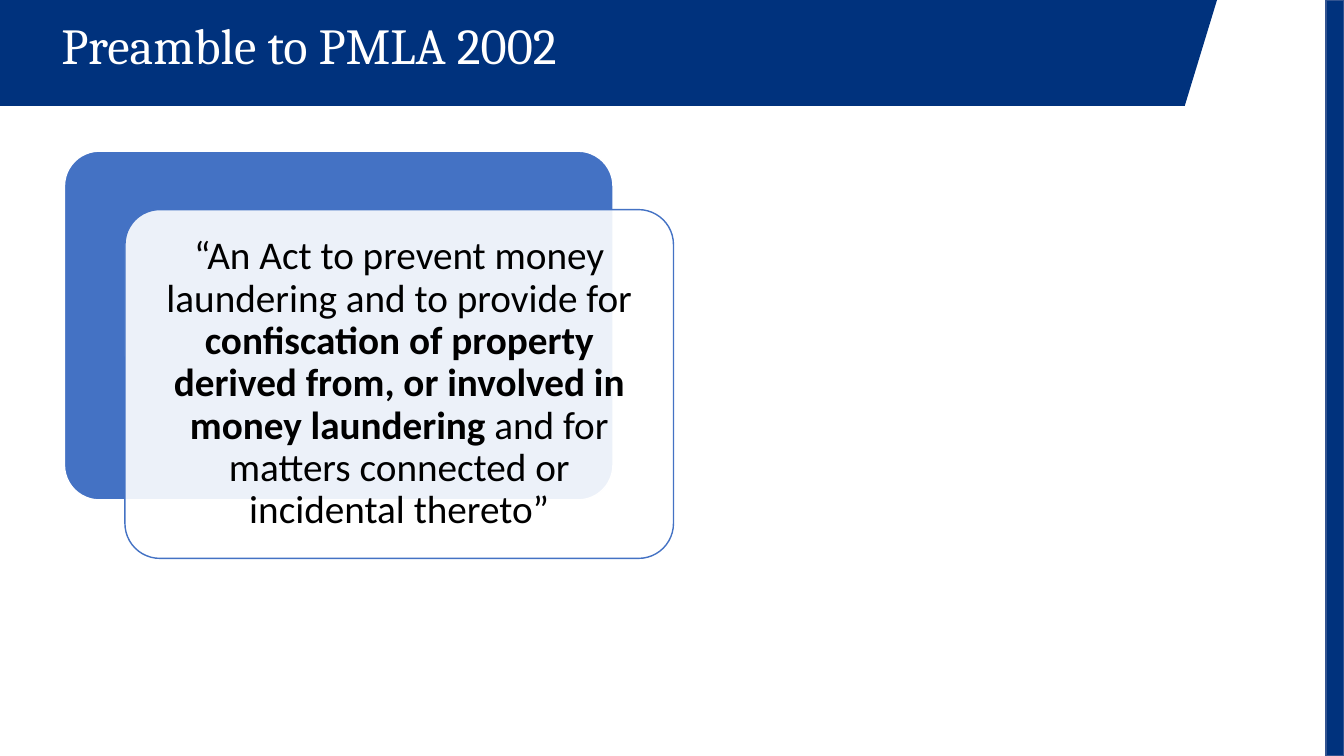
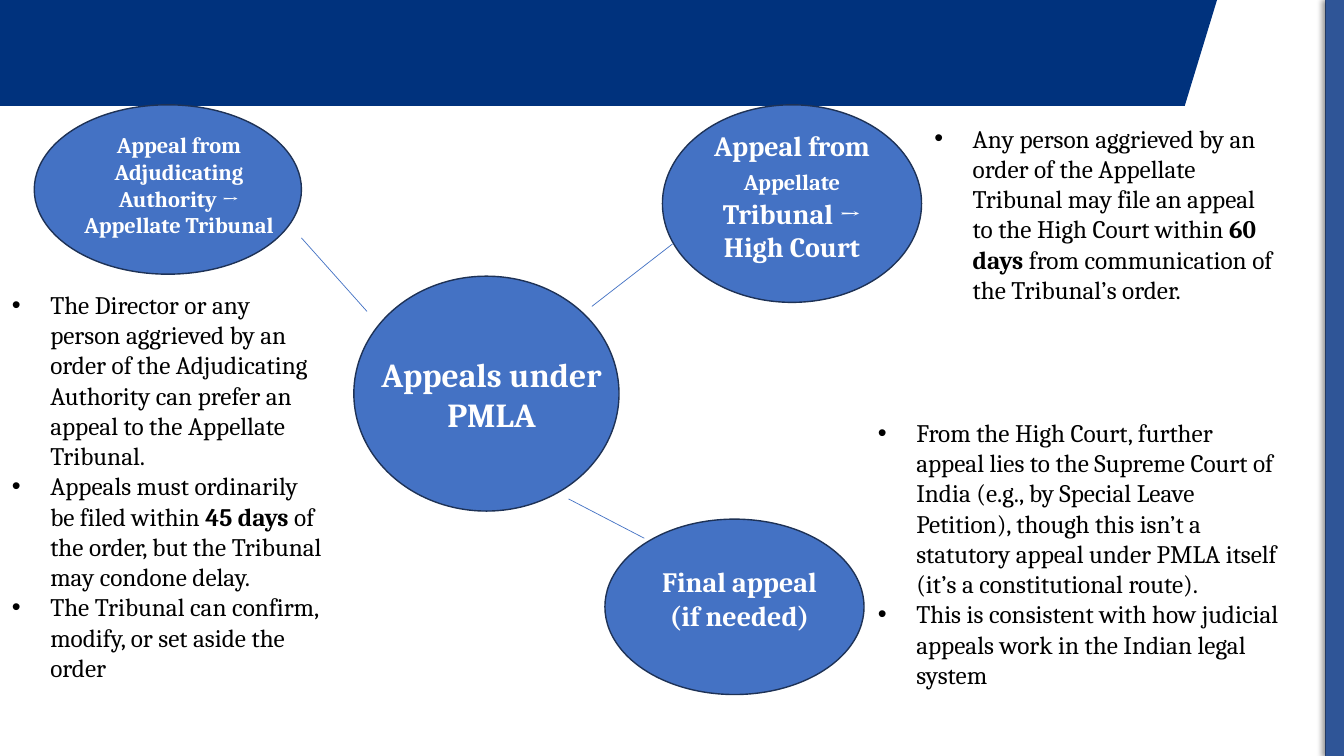
from lxml import etree
from pptx import Presentation
from pptx.dml.color import RGBColor
from pptx.enum.shapes import MSO_CONNECTOR, MSO_SHAPE
from pptx.enum.text import MSO_ANCHOR, MSO_AUTO_SIZE, PP_ALIGN
from pptx.oxml.ns import qn
from pptx.util import Inches, Pt

RECT = MSO_SHAPE.RECTANGLE
ROUND = MSO_SHAPE.ROUNDED_RECTANGLE
OVAL = MSO_SHAPE.OVAL
LINE = MSO_CONNECTOR.STRAIGHT
MID = MSO_ANCHOR.MIDDLE
GROW = MSO_AUTO_SIZE.SHAPE_TO_FIT_TEXT
LEFT, CENTER = PP_ALIGN.LEFT, PP_ALIGN.CENTER

NAVY, EDGE, SIDE = "00327D", "325491", "2F5597"
BLUE, RIM, WHITE, BLACK = "4472C4", "1E3256", "FFFFFF", "000000"
SERIF, SANS = "Cambria", "Calibri"

deck = Presentation()
deck.slide_width, deck.slide_height = Inches(13.33), Inches(7.5)
WIDE, HIGH = deck.slide_width, deck.slide_height
COL, ROW = WIDE / 100, HIGH / 100


def paint(fill, hue):
    if hue is None:
        fill.background()
    else:
        fill.solid()
        fill.fore_color.rgb = RGBColor.from_string(hue)


def add(page, kind, box, fill=None, line=None, text=(), form=None, base=None, mark=None, dot=False):
    place = [round(n * unit) for n, unit in zip(box, (COL, ROW, COL, ROW))]
    if kind is None:
        shape = page.shapes.add_textbox(*place)
    else:
        shape = page.shapes.add_shape(kind, *place)
        shape.shadow.inherit = False
        paint(shape.fill, fill)
        paint(shape.line.fill, line)
        if line:
            shape.line.width = Pt(1)
    frame = shape.text_frame
    frame.word_wrap = True
    for i, words in enumerate(text):
        par = frame.add_paragraph() if i else frame.paragraphs[0]
        for name, value in (form or {}).items():
            setattr(par, name, value)
        if dot:
            props = par._p.get_or_add_pPr()
            props.set("marL", str(Inches(0.38)))
            props.set("indent", str(-Inches(0.38)))
            etree.SubElement(props, qn("a:buFont")).set("typeface", "Arial")
            etree.SubElement(props, qn("a:buChar")).set("char", "•")
        for j, part in enumerate(words.split("*")):
            run = par.add_run()
            run.text = part
            look = {**base, **(mark or {})} if j % 2 else dict(base)
            paint(run.font.fill, look.pop("hue"))
            for name, value in look.items():
                setattr(run.font, name, value)
    return shape


pages = [deck.slides.add_slide(deck.slide_layouts[6]) for _ in range(2)]
for page in pages:
    pen = page.shapes.build_freeform(0, 0, scale=(COL / 100, ROW / 100))
    pen.add_line_segments([(0, 1400), (8815, 1400), (9055, 0)], close=True)
    band = pen.convert_to_shape()
    band.shadow.inherit = False
    paint(band.fill, NAVY)
    paint(band.line.fill, None)
    add(page, RECT, (98.65, 0, 1.35, 100), NAVY, EDGE)

act, map = pages

add(act, None, (3.83, 2.13, 68.94, 8.53), text=["Preamble to PMLA 2002"],
    form={"line_spacing": 0.9, "space_before": Pt(10)},
    base={"name": SERIF, "size": Pt(36), "hue": WHITE})

quote = [
    "“An Act to prevent money laundering and to provide for "
    "*confiscation of property derived from, or involved in money laundering*"
    " and for matters connected or incidental thereto”"
]
back = add(act, ROUND, (4.8, 20, 40.81, 46.13), BLUE, WHITE)
front = add(act, ROUND, (9.3, 27.73, 40.81, 46.13), WHITE, BLUE, quote,
            {"alignment": CENTER, "line_spacing": 0.9},
            {"name": SANS, "size": Pt(28), "hue": BLACK}, {"bold": True})
for card in (back, front):
    card.adjustments[0] = 0.1
for side in ("left", "top", "right", "bottom"):
    setattr(front.text_frame, "margin_" + side, Inches(0.12))
front.text_frame.vertical_anchor = MID
tint = front._element.spPr.find(qn("a:solidFill"))[0]
etree.SubElement(tint, qn("a:alpha")).set("val", "90000")

strip = add(map, RECT, (98.65, 0, 1.35, 100), SIDE)
glow = etree.SubElement(strip._element.spPr.find(qn("a:effectLst")), qn("a:outerShdw"))
for name, value in {"blurRad": Pt(4), "dist": Pt(3), "dir": 180 * 60000}.items():
    glow.set(name, str(value))
shade = etree.SubElement(glow, qn("a:srgbClr"), val=BLACK)
etree.SubElement(shade, qn("a:alpha"), val="40000")

nodes = [
    ((26.33, 36.53, 19.73, 31.07), (26.03, 46.13, 21.08, 17.47), 24, "Appeals under PMLA"),
    ((2.55, 13.87, 19.88, 22.4), (4.73, 16.67, 17.18, 19.33), 16,
     "Appeal from Adjudicating Authority → Appellate Tribunal"),
    ((49.29, 13.87, 19.28, 26.13), (52.14, 16.4, 13.58, 23.73), 20,
     "Appeal from *Appellate* Tribunal → High Court"),
    ((45.01, 68.67, 19.28, 23.2), (47.41, 74, 15.23, 14.8), 20, "Final appeal (if needed)"),
]
for oval, label, size, words in nodes:
    add(map, OVAL, oval, BLUE, RIM)

links = [
    (27.31, 41.2, 22.43, 31.47),
    (44.04, 40.53, 50.04, 32.27),
    (42.31, 66, 47.94, 71.2),
]
for ends in links:
    spots = [round(n * unit) for n, unit in zip(ends, (COL, ROW, COL, ROW))]
    link = map.shapes.add_connector(LINE, *spots)
    paint(link.line.fill, BLUE)
    link.line.width = Pt(0.5)
    etree.SubElement(link._element.spPr, qn("a:effectLst"))

for oval, label, size, words in nodes:
    text = add(map, None, label, text=[words], form={"alignment": CENTER},
               base={"name": SERIF, "size": Pt(size), "bold": True, "hue": WHITE},
               mark={"size": Pt(16)})
    text.text_frame.auto_size = GROW

notes = [
    ((0.15, 37.6, 24.83, 61.87), [
        "The Director or any person aggrieved by an order of the Adjudicating Authority "
        "can prefer an appeal to the Appellate Tribunal.",
        "Appeals must ordinarily be filed within *45 days *of the order, "
        "but the Tribunal may condone delay.",
        "The Tribunal can confirm, modify, or set aside the order",
    ]),
    ((68.79, 15.6, 27.16, 29.6), [
        "Any person aggrieved by an order of the Appellate Tribunal may file an appeal "
        "to the High Court within *60 days *from communication of the Tribunal’s order.",
    ]),
    ((64.59, 54.53, 31.43, 41.73), [
        "From the High Court, further appeal lies to the Supreme Court of India "
        "(e.g., by Special Leave Petition), though this isn’t a statutory appeal "
        "under PMLA itself (it’s a constitutional route).",
        "This is consistent with how judicial appeals work in the Indian legal system",
    ]),
]
for box, lines in notes:
    note = add(map, None, box, text=lines, form={"alignment": LEFT},
               base={"name": SERIF, "size": Pt(18), "hue": BLACK},
               mark={"bold": True}, dot=True)
    note.text_frame.auto_size = GROW

deck.save("out.pptx")
